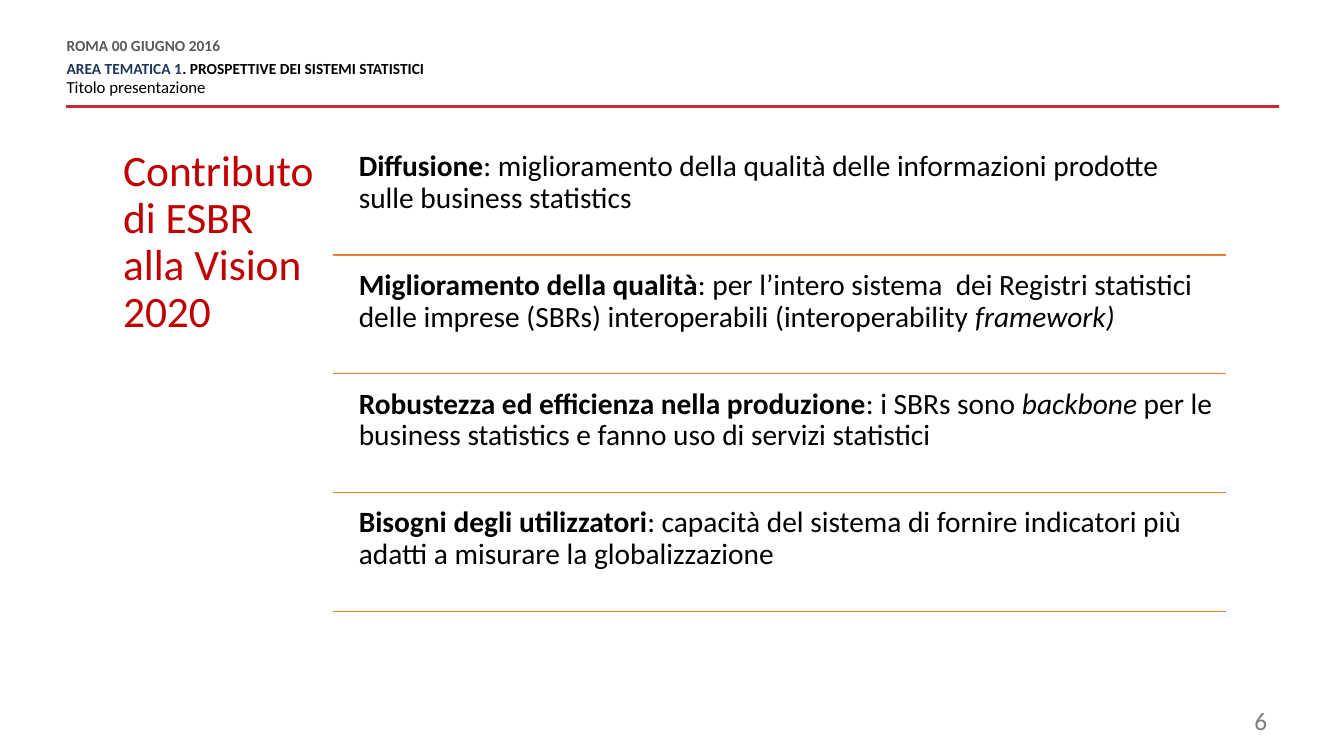
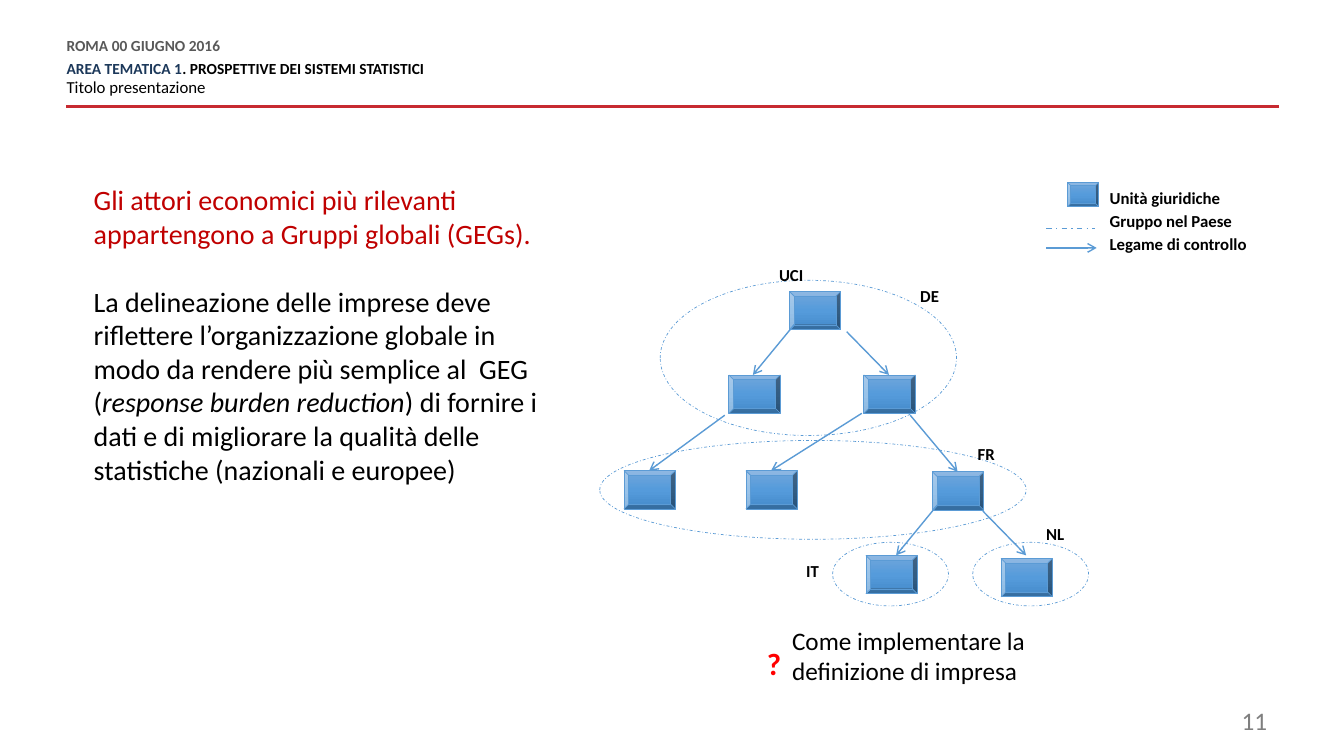
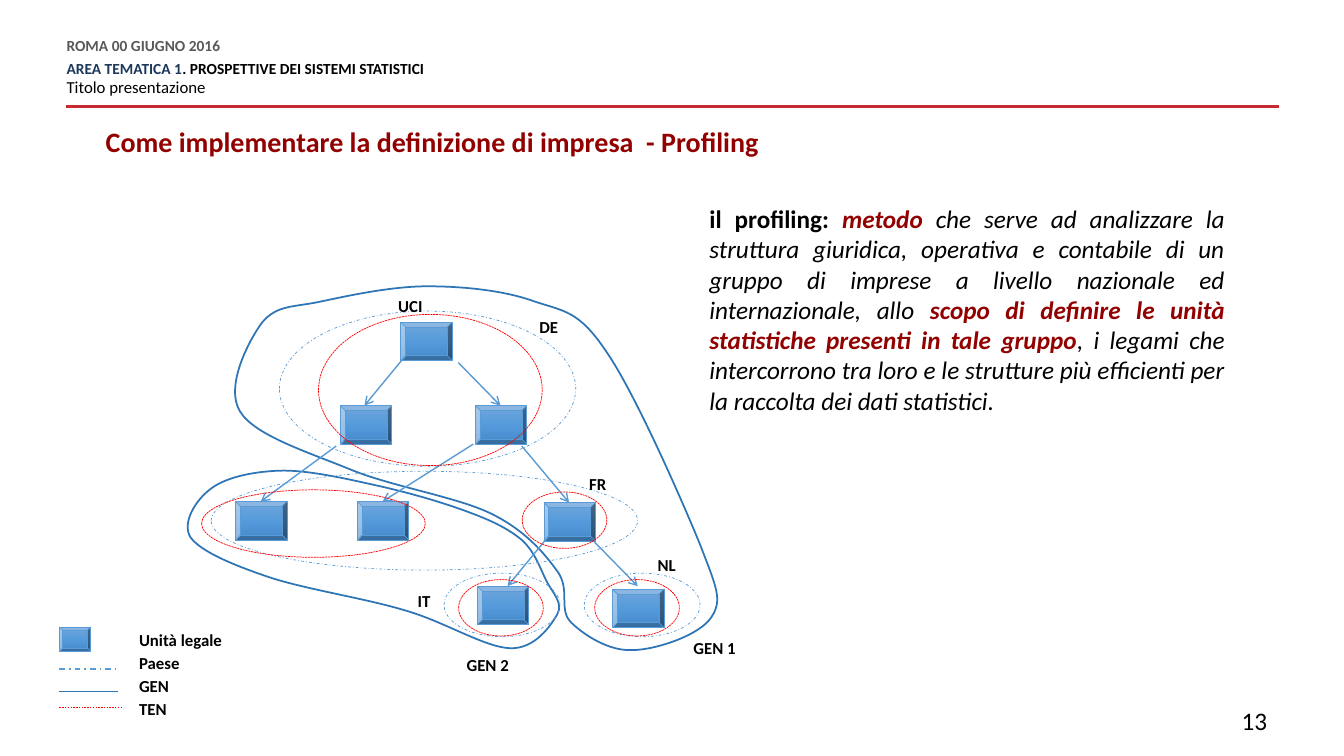
import copy

import pptx
import pptx.util
import pptx.dml.color
import pptx.enum.dml
import pptx.enum.shapes
import pptx.enum.text
import pptx.oxml.ns
import pptx.oxml.xmlchemy

Pt = pptx.util.Pt
SHAPE = pptx.enum.shapes.MSO_SHAPE
DASH = pptx.enum.dml.MSO_LINE
ALIGN = pptx.enum.text.PP_ALIGN
qn = pptx.oxml.ns.qn
new_element = pptx.oxml.xmlchemy.OxmlElement

COLORS = {
    "black": "000000", "date": "595959", "area": "1C385A", "rule": "C72A31",
    "number": "7F7F7F", "title": "C00000", "dark_red": "920000", "red": "FF0000",
    "orange": "ED7D31", "blue": "5B9BD5", "gen": "2E75B6",
    "box_top": "71A6DB", "box_mid": "559BDB", "box_low": "448ACA",
}
FONT = "Calibri"
BOX_SIZE = (36.7, 27.4)
LEGEND_BOX = (22.3, 17.3)

HEADER = [
    [("ROMA 00 GIUGNO 2016", {"color": "date", "bold": True})],
    [("AREA TEMATICA 1", {"color": "area", "bold": True}),
     (". PROSPETTIVE DEI SISTEMI STATISTICI", {"bold": True})],
    [("Titolo presentazione", {"size": 12})],
]

VISION = [
    [("Diffusione", {"bold": True}),
     ": miglioramento della qualità delle informazioni prodotte sulle business statistics"],
    [("Miglioramento della qualità", {"bold": True}),
     ": per l’intero sistema  dei Registri statistici delle imprese (SBRs) "
     "interoperabili (interoperability ",
     ("framework)", {"italic": True})],
    [("Robustezza ed efficienza nella produzione", {"bold": True}),
     ": i SBRs sono ", ("backbone", {"italic": True}),
     " per le business statistics e fanno uso di servizi statistici"],
    [("Bisogni degli utilizzatori", {"bold": True}),
     ": capacità del sistema di fornire indicatori più adatti a misurare la globalizzazione"],
]

UNITS = [(563.8, 208.1), (520.6, 267.8), (617, 267.8), (445.7, 336.2),
         (532.8, 336.2), (666, 337), (618.5, 396.7), (715, 398.9)]
CONTROL_LINKS = [
    (604.8, 236.9, 635, 267.8), (567.4, 231.8, 537.8, 267.8),
    (650.2, 296.6, 684, 337), (517.7, 296.6, 463.7, 336.2),
    (615.6, 295.2, 550.8, 336.2), (702, 365, 733, 396.7),
    (669.6, 360.7, 640.1, 396.7),
]
COUNTRIES = [(428.4, 314.6, 304.6, 70.6), (594.7, 387.4, 82.8, 45.4),
             (694.8, 387.4, 82.8, 45.4)]
COUNTRY_LABELS = [("IT", 568.8, 396.7), ("FR", 691.2, 313.2), ("NL", 740.2, 370.8)]

GEN_1 = [
    (229.7, 215.3),
    (249.8, 211), (280.1, 204.5), (305.3, 204.5),
    (330.5, 204.5), (360, 207.4), (381.6, 215.3),
    (403.2, 222.5), (413.3, 221.8), (432.7, 250.6),
    (452.9, 279.4), (486.7, 356.4), (499.7, 388.1),
    (511.9, 419.8), (516.2, 428.4), (508.3, 440.6),
    (500.4, 453.6), (468, 464.4), (451.4, 464.4),
    (434.9, 465.1), (416.9, 453.6), (407.5, 444.2),
    (398.9, 434.9), (407.5, 421.2), (398.2, 408.2),
    (388.8, 395.3), (375.8, 379.4), (351.4, 367.2),
    (326.9, 355), (280.8, 347.8), (250.6, 335.5),
    (221, 323.3), (181.4, 311), (171.4, 293.8),
    (160.6, 276.5), (177.1, 244.1), (187.2, 230.4),
    (198, 217.4), (210.2, 219.6), (229.7, 215.3),
]
GEN_2 = [
    (150.5, 349.2),
    (160.6, 341.3), (179.3, 337), (199.4, 336.2),
    (219.6, 335.5), (247.7, 342), (270, 347),
    (293, 352.1), (317.5, 359.3), (334.8, 365.8),
    (352.1, 372.2), (363.6, 378), (373, 385.9),
    (382.3, 394.6), (385.9, 406.1), (390.2, 414.7),
    (394.6, 423.4), (402.5, 430.6), (398.2, 438.5),
    (393.8, 446.4), (382.3, 463.7), (364.3, 463),
    (345.6, 462.2), (316.8, 443.5), (288, 435.6),
    (259.2, 427), (216, 420.5), (190.8, 411.8),
    (165.6, 403.2), (143.3, 393.8), (136.1, 383.8),
    (129.6, 373.7), (139.7, 357.1), (150.5, 349.2),
]
TEN = [(424.8, 414, 60.5, 40.3), (327.6, 414, 60.5, 40.3), (144, 349.9, 159.8, 48.2),
       (373, 351.4, 60.5, 40.3), (227.5, 224.6, 159.8, 108)]


def rgb(name):
    return pptx.dml.color.RGBColor.from_string(COLORS[name])


def add_run(p, text, size=12, color="black", bold=False, italic=False):
    r = p.add_run()
    r.text = text
    font = r.font
    font.name, font.size = FONT, Pt(size)
    font.bold, font.italic = bold, italic
    font.color.rgb = rgb(color)


class Deck:
    def __init__(self):
        self.prs = pptx.Presentation()
        self.prs.slide_width, self.prs.slide_height = Pt(960), Pt(540)
        self.s = None

    def new_slide(self, number, color="number"):
        self.s = self.prs.slides.add_slide(self.prs.slide_layouts[6])
        self.line(913.7, 76.3, 47.5, 76.3, "rule", 2)
        self.text(47.5, 28.1, 600, 42.5, HEADER, inset=(0, 0), spacing=Pt(10.8),
                  gaps=(6, 3), size=11)
        self.text(688.3, 500.4, 223.9, 28.8, [str(number)], align=ALIGN.RIGHT,
                  size=18, color=color)

    def text(self, x, y, w, h, paragraphs, inset=(7.2, 3.6), spacing=None,
             gaps=(), align=ALIGN.LEFT, **style):
        tf = self.s.shapes.add_textbox(Pt(x), Pt(y), Pt(w), Pt(h)).text_frame
        tf.word_wrap = True
        tf.margin_left = tf.margin_right = Pt(inset[0])
        tf.margin_top = tf.margin_bottom = Pt(inset[1])
        for i, runs in enumerate(paragraphs):
            p = tf.add_paragraph() if i else tf.paragraphs[0]
            p.alignment = align
            if spacing:
                p.line_spacing = spacing
            if i and gaps:
                p.space_before = Pt(gaps[i - 1])
            for run in [runs] if isinstance(runs, str) else runs:
                text, extra = (run, {}) if isinstance(run, str) else run
                add_run(p, text, **{**style, **extra})

    def label(self, text, x, y, w=44.6):
        self.text(x, y, w, 21.6, [text], bold=True)

    def outline(self, sp, color, width, dash=None):
        sp.line.color.rgb = rgb(color)
        sp.line.width = Pt(width)
        if dash:
            sp.line.dash_style = dash

    def line(self, x1, y1, x2, y2, color="blue", width=1, dash=None, arrow=False):
        sp = self.s.shapes.add_connector(
            pptx.enum.shapes.MSO_CONNECTOR.STRAIGHT, Pt(x1), Pt(y1), Pt(x2), Pt(y2))
        self.outline(sp, color, width, dash)
        if arrow:
            end = new_element("a:tailEnd")
            end.set("type", "arrow")
            sp._element.spPr.find(qn("a:ln")).append(end)
        sp._element.spPr.append(new_element("a:effectLst"))

    def shape(self, kind, x, y, w, h):
        sp = self.s.shapes.add_shape(kind, Pt(x), Pt(y), Pt(w), Pt(h))
        sp.shadow.inherit = False
        return sp

    def ellipse(self, x, y, w, h, color="blue", dash=DASH.DASH_DOT):
        sp = self.shape(SHAPE.OVAL, x, y, w, h)
        sp.fill.background()
        self.outline(sp, color, 0.5, dash)

    def unit(self, x, y, w, h):
        sp = self.shape(SHAPE.BEVEL, x, y, w, h)
        self.outline(sp, "blue", 0.5)
        sp.fill.gradient()
        sp.fill.gradient_angle = 270
        stops = sp._element.spPr.find(qn("a:gradFill")).find(qn("a:gsLst"))
        stops.insert(1, copy.deepcopy(stops[0]))
        for i, name in enumerate(("box_top", "box_mid", "box_low")):
            stop = sp.fill.gradient_stops[i]
            stop.color.rgb = rgb(name)
            stop.position = i / 2

    def curve(self, points, color, width):
        start, *rest = [(Pt(x), Pt(y)) for x, y in points]
        builder = self.s.shapes.build_freeform(*start)
        builder.add_line_segments(rest, close=True)
        sp = builder.convert_to_shape()
        sp.shadow.inherit = False
        sp.fill.background()
        self.outline(sp, color, width)
        segments = list(sp._element.iter(qn("a:lnTo")))
        for i in range(0, len(segments), 3):
            bezier = new_element("a:cubicBezTo")
            segments[i].addprevious(bezier)
            for segment in segments[i:i + 3]:
                bezier.append(segment[0])
                segment.getparent().remove(segment)

    def legend(self, x, y, entries):
        self.text(x, y, 143.3, 18 * len(entries), entries,
                  gaps=(2,) * (len(entries) - 1), bold=True)

    def group_tree(self, dx=0, dy=0, head_dx=0):
        self.ellipse(471.6 + head_dx, 200.2 + dy, 211.7, 110.9)
        for x, y in UNITS:
            self.unit(x + dx, y + dy, *BOX_SIZE)
        for x1, y1, x2, y2 in CONTROL_LINKS:
            self.line(x1 + dx, y1 + dy, x2 + dx, y2 + dy, arrow=True)
        for x, y, w, h in COUNTRIES:
            self.ellipse(x + dx, y + dy, w, h)
        for text, x, y in COUNTRY_LABELS:
            self.label(text, x + dx, y + dy)
        self.label("DE", 650.2 + head_dx, 200.9 + dy)
        self.label("UCI", 549.4 + head_dx, 185.8 + dy, 62.6)


def vision_slide(deck):
    deck.new_slide(6)
    deck.text(78.5, 97.2, 159.1, 343.4, ["Contributo di ESBR alla Vision 2020"],
              inset=(9.4, 9.4), spacing=0.9, size=31, color="title")
    for i, item in enumerate(VISION):
        y = 101.5 + 84.8 * i
        deck.text(249.8, y, 625.7, 80.6, [item], inset=(6.5, 6.5), spacing=0.9, size=21)
        deck.line(237.6, y + 80.7, 875.5, y + 80.7, "orange")


def groups_slide(deck):
    deck.new_slide(11)
    deck.text(59.8, 127, 336.2, 247, [
        [("Gli attori economici più rilevanti appartengono a Gruppi globali (GEGs).",
          {"color": "title"})],
        ["La delineazione delle imprese deve riflettere l’organizzazione globale in modo "
         "da rendere più semplice al  GEG (",
         ("response burden reduction", {"italic": True}),
         ") di fornire i dati e di migliorare la qualità delle statistiche "
         "(nazionali e europee)"],
    ], gaps=(24.4,), size=20)
    deck.group_tree()
    deck.unit(762.5, 130.3, *LEGEND_BOX)
    deck.line(747.4, 163.4, 782, 163.4, dash=DASH.DASH_DOT)
    deck.line(747.4, 177.1, 783.4, 177.1, arrow=True)
    deck.legend(785.5, 130.3, ["Unità giuridiche", "Gruppo nel Paese",
                               "Legame di controllo"])
    deck.text(558.7, 442.8, 218.9, 51.1,
              ["Come implementare la definizione di impresa"], size=18)
    deck.text(540.7, 457.2, 46.1, 33.8, ["?"], size=22, color="red", bold=True)


def profiling_slide(deck):
    deck.new_slide(13, "black")
    deck.text(68.4, 90, 838.8, 27.4,
              ["Come implementare la definizione di impresa  - Profiling"],
              spacing=0.8, size=20, color="dark_red", bold=True)
    for points in (GEN_2, GEN_1):
        deck.curve(points, "gen", 1.25)
    deck.group_tree(dx=-277.5, dy=22, head_dx=-272)
    for area in TEN:
        deck.ellipse(*area, color="red", dash=DASH.SQUARE_DOT)
    deck.label("GEN 1", 488.2, 452.2, 72.7)
    deck.label("GEN 2", 326.2, 464.4, 72.7)
    deck.unit(42.5, 447.8, *LEGEND_BOX)
    deck.line(42.5, 478, 84.2, 478, dash=DASH.DASH_DOT)
    deck.line(42.5, 493.9, 84.2, 493.9, "gen")
    deck.line(42.5, 505.4, 86.4, 505.4, "red", dash=DASH.ROUND_DOT)
    deck.legend(92.2, 446.4, ["Unità legale", "Paese", "GEN", "TEN"])
    key = {"color": "dark_red", "bold": True}
    deck.text(499.7, 141.8, 382.3, 159.8, [[
        ("il profiling: ", {"bold": True, "italic": False}),
        ("metodo ", key),
        "che serve ad analizzare la struttura giuridica, operativa e contabile di un "
        "gruppo di imprese a livello nazionale ed internazionale, allo ",
        ("scopo di definire le unità statistiche presenti in tale gruppo", key),
        ", i legami che intercorrono tra loro e le strutture più efficienti per la "
        "raccolta dei dati statistici.",
    ]], align=ALIGN.JUSTIFY, size=18, italic=True)


def main():
    deck = Deck()
    vision_slide(deck)
    groups_slide(deck)
    profiling_slide(deck)
    deck.prs.save("out.pptx")


if __name__ == "__main__":
    main()
